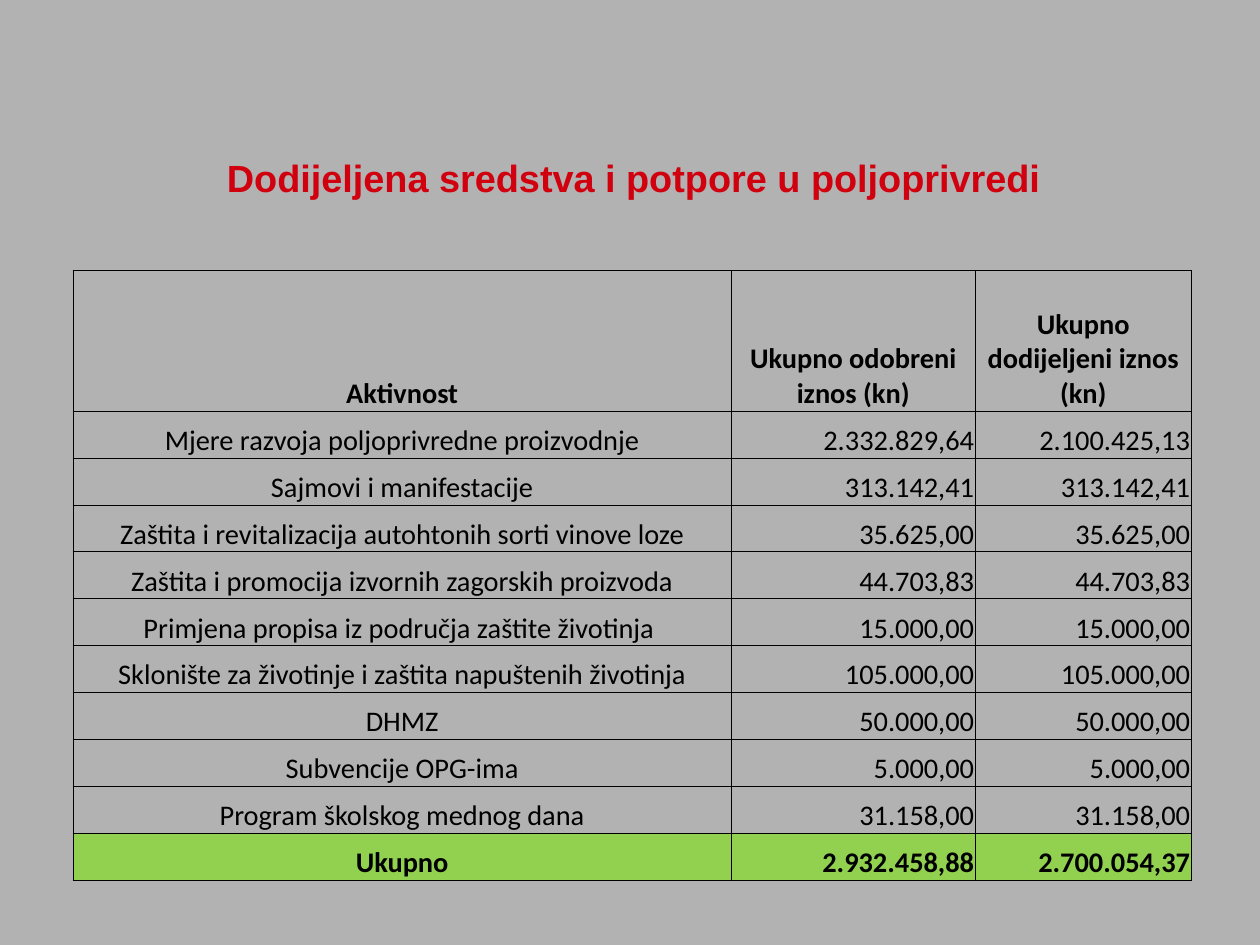
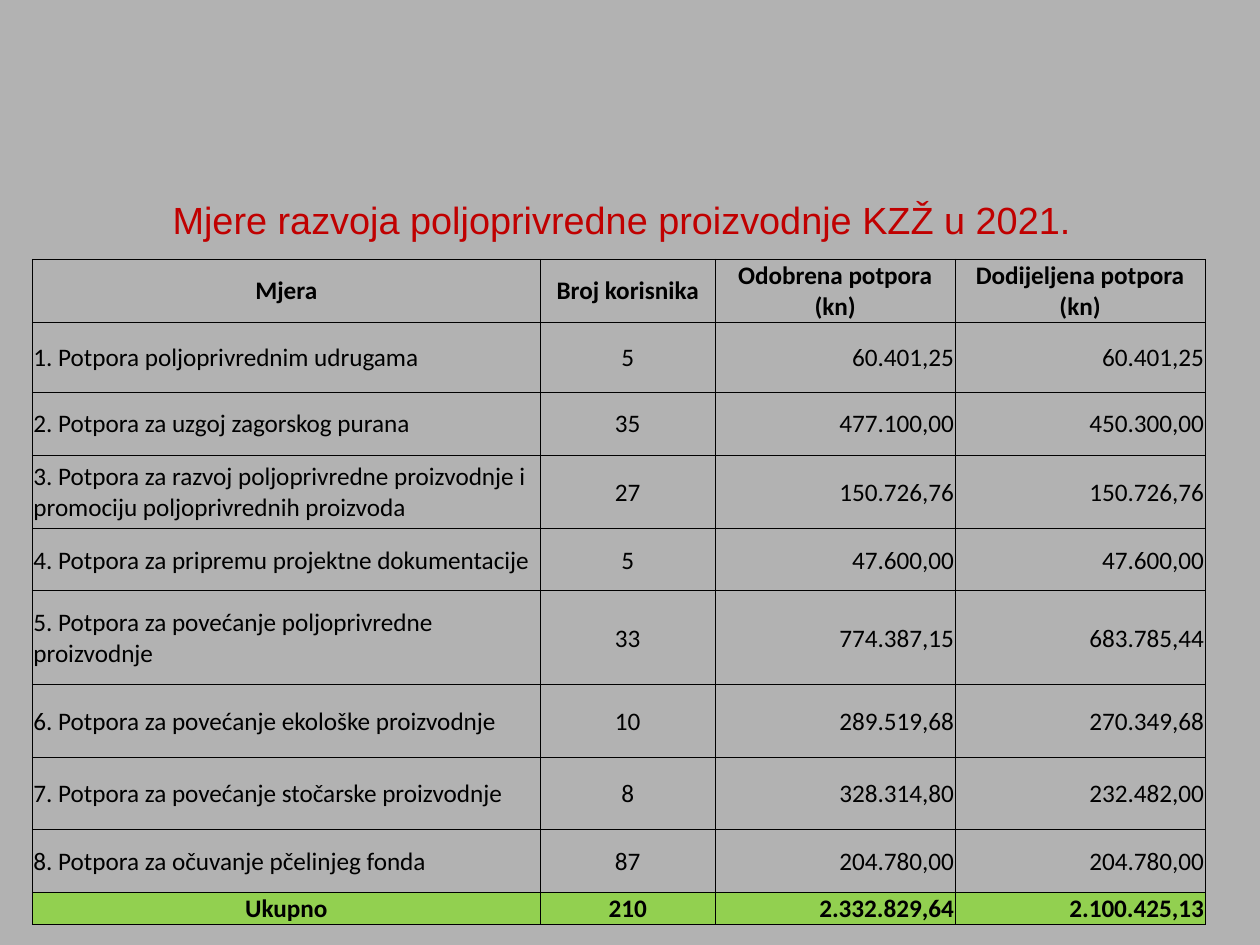
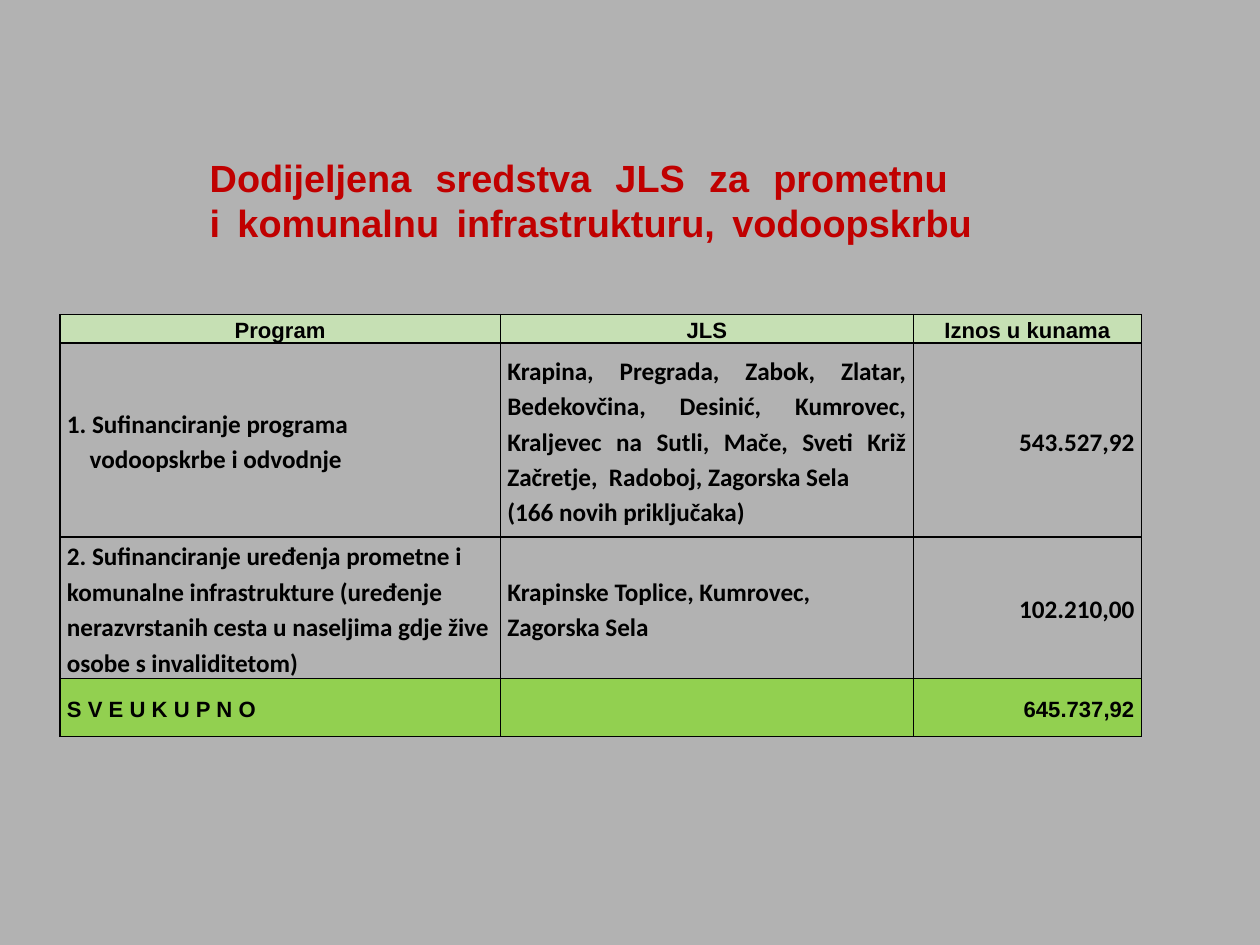
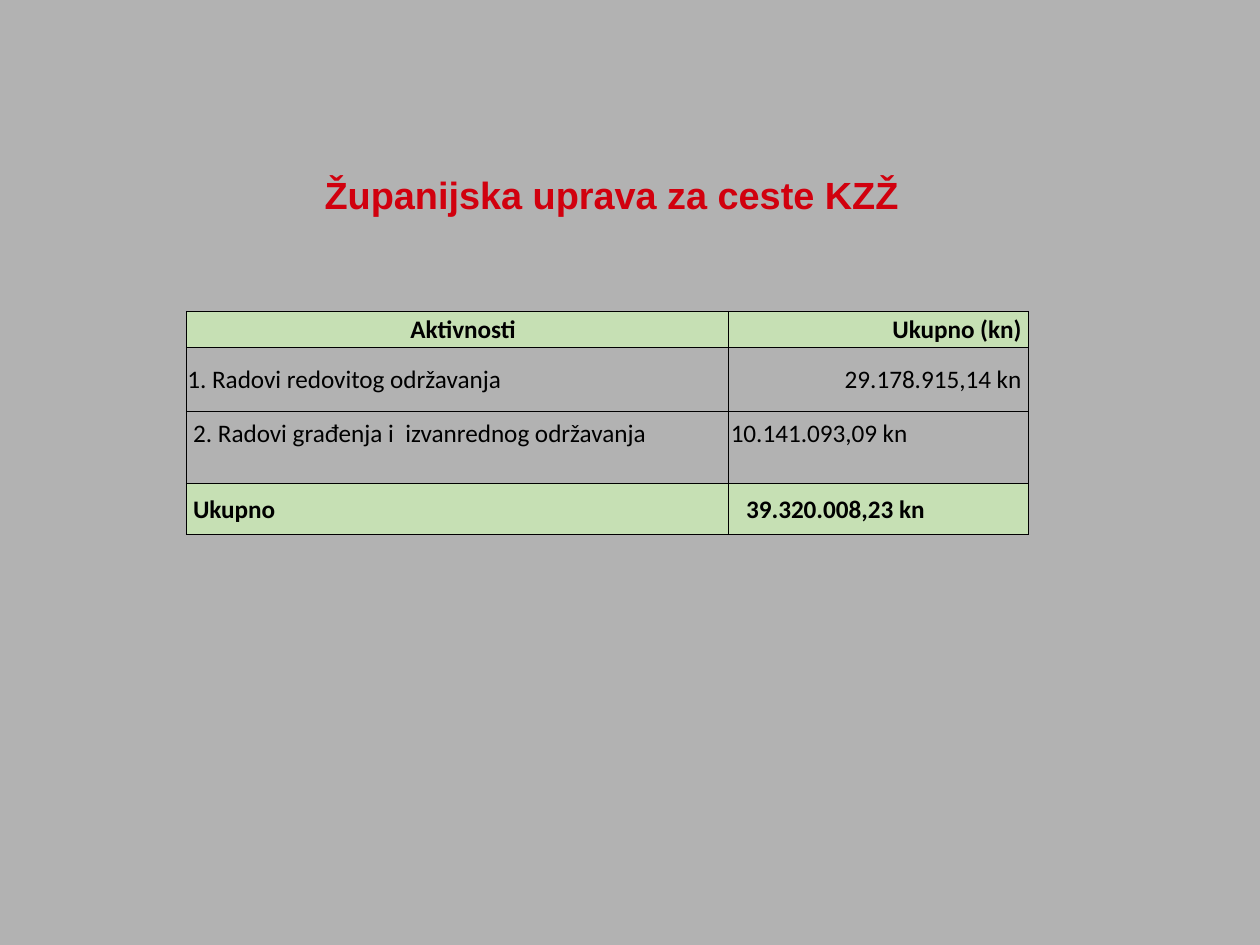
from lxml import etree
from pptx import Presentation
from pptx.dml.color import RGBColor
from pptx.enum import text
from pptx.oxml.ns import qn
from pptx.util import Pt

COLORS = {
    "background": "B2B2B2",
    "red": "D1000E",
    "dark_red": "C00000",
    "black": "000000",
    "total": "92D050",
    "header": "C6E0B4",
}
ALIGN = {
    "l": text.PP_ALIGN.LEFT,
    "c": text.PP_ALIGN.CENTER,
    "r": text.PP_ALIGN.RIGHT,
    "j": text.PP_ALIGN.JUSTIFY,
}
TOP, MIDDLE, BOTTOM = (
    text.MSO_ANCHOR.TOP, text.MSO_ANCHOR.MIDDLE, text.MSO_ANCHOR.BOTTOM)
TIGHT = (0.75, 0.75, 0.75, 0)


def rgb(name):
    """Return a named colour."""
    return RGBColor.from_string(COLORS[name])


def style_runs(p, size, font="Calibri", color="black", bold=False):
    """Format every run of a paragraph."""
    for r in p.runs:
        r.font.size = Pt(size)
        r.font.name = font
        r.font.bold = bold
        r.font.color.rgb = rgb(color)


def add_title_slide(prs, title, box, color="red", bold=True, align="c"):
    """Add a slide with a red title and return it."""
    slide = prs.slides.add_slide(prs.slide_layouts[5])
    sp = slide.shapes.title
    sp.left, sp.top, sp.width, sp.height = (Pt(v) for v in box)
    tf = sp.text_frame
    tf.auto_size = text.MSO_AUTO_SIZE.NONE
    tf.vertical_anchor = TOP
    p = tf.paragraphs[0]
    p.text = title
    p.alignment = ALIGN[align]
    style_runs(p, 24, "Arial", color, bold)
    return slide


def set_margins(cell, margins):
    """Set the left, top, right and bottom cell margins."""
    (cell.margin_left, cell.margin_top,
     cell.margin_right, cell.margin_bottom) = (Pt(m) for m in margins)


def set_borders(cell, width):
    """Draw a solid black line on each side of a cell."""
    tc_pr = cell._tc.get_or_add_tcPr()
    for i, side in enumerate(("a:lnL", "a:lnR", "a:lnT", "a:lnB")):
        ln = etree.Element(qn(side), w=str(int(Pt(width))))
        fill = etree.SubElement(ln, qn("a:solidFill"))
        etree.SubElement(fill, qn("a:srgbClr"), val=COLORS["black"])
        tc_pr.insert(i, ln)


def align_cell(cell, align):
    """Align all paragraphs of a cell."""
    for p in cell.text_frame.paragraphs:
        p.alignment = ALIGN[align]


def add_grid(slide, origin, cols, heights, rows, aligns, size=16,
             anchor=MIDDLE, margins=TIGHT, border=0.5, spacing=None,
             fills=None, bold_body=False):
    """Add a bordered table with a bold first and last row."""
    fills = fills or {}
    frame = slide.shapes.add_table(
        len(rows), len(cols), *(Pt(v) for v in origin),
        Pt(sum(cols)), Pt(sum(heights)))
    table = frame.table
    table.first_row = table.horz_banding = False
    for column, width in zip(table.columns, cols):
        column.width = Pt(width)
    for i, (row, height) in enumerate(zip(rows, heights)):
        table.rows[i].height = Pt(height)
        bold = bold_body or i in (0, len(rows) - 1)
        for j, value in enumerate(row):
            cell = table.cell(i, j)
            cell.text_frame.text = value
            cell.vertical_anchor = anchor
            set_margins(cell, margins)
            align_cell(cell, aligns[j] if i else "c")
            for p in cell.text_frame.paragraphs:
                p.line_spacing = spacing
                style_runs(p, size, bold=bold)
            if i in fills:
                cell.fill.solid()
                cell.fill.fore_color.rgb = rgb(fills[i])
            else:
                cell.fill.background()
            set_borders(cell, border)
    return table


def build_grants(prs):
    """Build the overview of agricultural grants."""
    slide = add_title_slide(
        prs, "Dodijeljena sredstva i potpore u poljoprivredi",
        (88, 94.6, 628, 45))
    rows = [
        ("Aktivnost", "Ukupno odobreni iznos (kn)",
         "Ukupno dodijeljeni iznos (kn)"),
        ("Mjere razvoja poljoprivredne proizvodnje",
         "2.332.829,64", "2.100.425,13"),
        ("Sajmovi i manifestacije", "313.142,41", "313.142,41"),
        ("Zaštita i revitalizacija autohtonih sorti vinove loze",
         "35.625,00", "35.625,00"),
        ("Zaštita i promocija izvornih zagorskih proizvoda",
         "44.703,83", "44.703,83"),
        ("Primjena propisa iz područja zaštite životinja ",
         "15.000,00", "15.000,00"),
        ("Sklonište za životinje i zaštita napuštenih životinja",
         "105.000,00", "105.000,00"),
        ("DHMZ", "50.000,00", "50.000,00"),
        ("Subvencije OPG-ima", "5.000,00", "5.000,00"),
        ("Program školskog mednog dana", "31.158,00", "31.158,00"),
        ("Ukupno", "2.932.458,88", "2.700.054,37"),
    ]
    add_grid(slide, (46.3, 171.4), (417.6, 154.8, 137),
             [89.4] + [29.78] * 10, rows, "crr", size=18, anchor=BOTTOM,
             fills={10: "total"})


def build_measures(prs):
    """Build the list of development measures."""
    slide = add_title_slide(
        prs, "Mjere razvoja poljoprivredne proizvodnje KZŽ u 2021.",
        (34.6, 121.2, 719.3, 36), "dark_red", bold=False)
    rows = [
        ("Mjera", "Broj korisnika", "Odobrena potpora (kn)",
         "Dodijeljena potpora (kn)"),
        ("1. Potpora poljoprivrednim udrugama",
         "5", "60.401,25", "60.401,25"),
        ("2. Potpora za uzgoj zagorskog purana",
         "35", "477.100,00", "450.300,00"),
        ("3. Potpora za razvoj poljoprivredne proizvodnje i "
         "promociju poljoprivrednih proizvoda",
         "27", "150.726,76", "150.726,76"),
        ("4. Potpora za pripremu projektne dokumentacije",
         "5", "47.600,00", "47.600,00"),
        ("5. Potpora za povećanje poljoprivredne proizvodnje",
         "33", "774.387,15", "683.785,44"),
        ("6. Potpora za povećanje ekološke proizvodnje",
         "10", "289.519,68", "270.349,68"),
        ("7. Potpora za povećanje stočarske proizvodnje",
         "8", "328.314,80", "232.482,00"),
        ("8. Potpora za očuvanje pčelinjeg fonda",
         "87", "204.780,00", "204.780,00"),
        ("Ukupno", "210", "2.332.829,64", "2.100.425,13"),
    ]
    table = add_grid(
        slide, (20.5, 164.4), (322.2, 111, 152.2, 158.6),
        (39.6, 44.6, 39.7, 46.9, 39.4, 59.6, 45.8, 46.1, 39.8, 20.2),
        rows, "lcrr", fills={9: "total"})
    align_cell(table.cell(9, 0), "c")
    for cell in table.rows[9].cells:
        cell.vertical_anchor = BOTTOM


def build_infrastructure(prs):
    """Build the table of funds for local infrastructure."""
    slide = add_title_slide(
        prs, "Dodijeljena sredstva JLS za prometnu \v"
        "i komunalnu infrastrukturu, vodoopskrbu\v",
        (125.8, 94.2, 498.2, 63.4), "dark_red", align="j")
    rows = [
        ("Program", "JLS", "Iznos u kunama"),
        ("1. Sufinanciranje programa\nvodoopskrbe i odvodnje",
         "Krapina, Pregrada, Zabok, Zlatar, Bedekovčina, Desinić, "
         "Kumrovec, Kraljevec na Sutli, Mače, Sveti Križ Začretje,  "
         "Radoboj, Zagorska Sela\n(166 novih priključaka)",
         "543.527,92"),
        ("2. Sufinanciranje uređenja prometne i\n"
         "komunalne infrastrukture (uređenje\n"
         "nerazvrstanih cesta u naseljima gdje žive\n"
         "osobe s invaliditetom)",
         "Krapinske Toplice, Kumrovec,\nZagorska Sela", "102.210,00"),
        ("S V E U K U P N O", "", "645.737,92"),
    ]
    table = add_grid(
        slide, (38, 199.6), (279.4, 262, 144.7), (18, 123, 89.8, 36.4),
        rows, "jjr", margins=(4.5, 0, 4.5, 0), border=1, spacing=1.15,
        fills={0: "header", 3: "total"}, bold_body=True)
    for i in (0, 3):
        for cell in table.rows[i].cells:
            style_runs(cell.text_frame.paragraphs[0], 14, "Arial", bold=True)
    continued = table.cell(1, 0).text_frame.paragraphs[1]
    continued._p.get_or_add_pPr().set("marL", str(int(Pt(14.4))))


def build_roads(prs):
    """Build the table of road works."""
    slide = add_title_slide(
        prs, "Županijska uprava za ceste KZŽ", (74, 105, 628, 39))
    rows = [
        ("Aktivnosti", "Ukupno (kn)"),
        ("1. Radovi redovitog održavanja", "29.178.915,14 kn"),
        ("2. Radovi građenja i  izvanrednog održavanja",
         "10.141.093,09 kn"),
        ("Ukupno", "39.320.008,23 kn"),
    ]
    table = add_grid(
        slide, (118.1, 197.4), (344, 190.3), (23, 40.6, 45.6, 32.6),
        rows, "lr", fills={0: "header", 3: "header"})
    margins = {
        (0, 0): (8, 0.75, 0.75, 0),
        (0, 1): (0.75, 0.75, 4.4, 0),
        (1, 1): (0.75, 0.75, 4.4, 0),
        (2, 0): (4.4, 4.2, 0.75, 0),
        (2, 1): (1.5, 4.2, 0.75, 0),
        (3, 0): (4.4, 0.75, 0.75, 0),
        (3, 1): (11.2, 0.75, 0.75, 0),
    }
    for place, values in margins.items():
        set_margins(table.cell(*place), values)
    align_cell(table.cell(0, 1), "r")
    for i in (2, 3):
        align_cell(table.cell(i, 1), "l")
    for cell in table.rows[2].cells:
        cell.vertical_anchor = TOP


def main():
    """Build and save the presentation."""
    prs = Presentation()
    prs.slide_width, prs.slide_height = Pt(799.25), Pt(599.5)
    fill = prs.slide_master.background.fill
    fill.solid()
    fill.fore_color.rgb = rgb("background")
    for build in (build_grants, build_measures, build_infrastructure,
                  build_roads):
        build(prs)
    prs.save("out.pptx")


if __name__ == "__main__":
    main()
